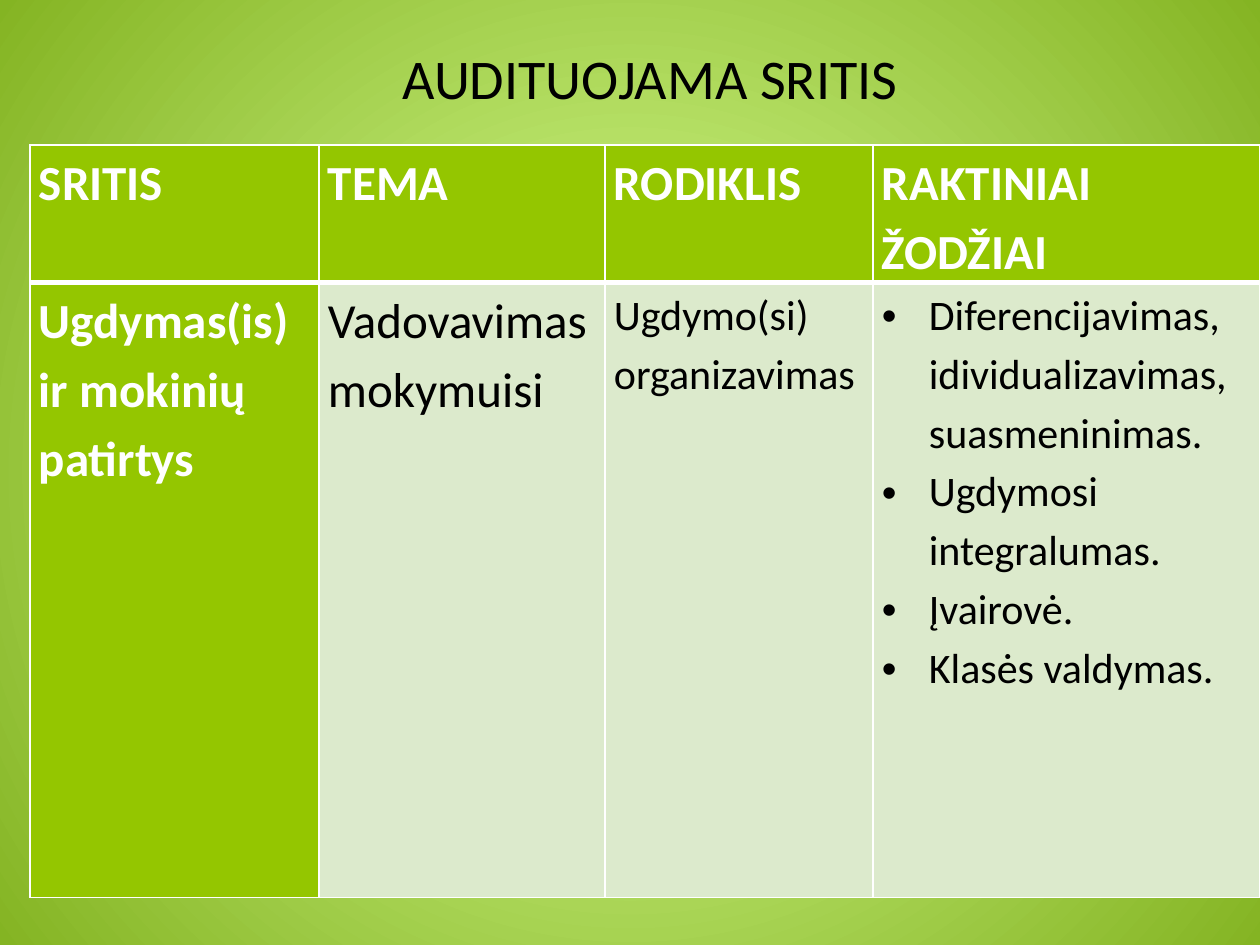
import pptx
import pptx.dml.color
import pptx.enum.text
import pptx.oxml
import pptx.oxml.ns
import pptx.util
from lxml import etree

# Content
TITLE = "AUDITUOJAMA SRITIS"
HEADERS = ["SRITIS", "TEMA", "RODIKLIS", "RAKTINIAI ŽODŽIAI"]
AREA = "Ugdymas(is) ir mokinių patirtys"
TOPIC = "Vadovavimas mokymuisi"
INDICATOR = "Ugdymo(si) organizavimas"
KEYWORDS = [
    "Diferencijavimas, idividualizavimas, suasmeninimas.",
    "Ugdymosi integralumas.",
    "Įvairovė.",
    "Klasės valdymas.",
]

THEME = {
    "font": "Calibri",
    "title_size": 32, "large": 28, "small": 24,
    "dark": "000000", "light": "FFFFFF",
    "strong_fill": "94C600", "pale_fill": "DCEACC",
    "glow": "D9FF95", "edge": "84B423",
    "thin": 1, "thick": 3, "line_spacing": 1.15,
}

# Layout in px
SCALE = 914400 / 126
PAGE_SIZE = (1260, 945)
TITLE_BOX = (115, 37, 1071, 81)
TABLE_AT = (30, 145)
COLUMNS = [289, 286, 268, 387]
ROWS = [137, 615]
CELL_INSET = 9
BULLET_INDENT = 47


def px(length):
    return pptx.util.Emu(round(length * SCALE))


def rgb(name):
    return pptx.dml.color.RGBColor.from_string(THEME[name])


def style_text(para, size, color, bold=False):
    for span in para.runs:
        span.font.name = THEME["font"]
        span.font.size = pptx.util.Pt(THEME[size])
        span.font.bold = bold
        span.font.color.rgb = rgb(color)


def add_bullet(para):
    props = para._p.get_or_add_pPr()
    props.set("marL", str(px(BULLET_INDENT)))
    props.set("indent", str(-px(BULLET_INDENT)))
    for tag, key, value in [("a:buFont", "typeface", "Arial"), ("a:buChar", "char", "•")]:
        etree.SubElement(props, pptx.oxml.ns.qn(tag)).set(key, value)


def set_borders(cell, top, bottom):
    props = cell._tc.get_or_add_tcPr()
    sides = [("L", "thin"), ("R", "thin"), ("T", top), ("B", bottom)]
    for index, (side, weight) in enumerate(sides):
        line = pptx.oxml.parse_xml(
            f'<a:ln{side} {pptx.oxml.ns.nsdecls("a")} w="{pptx.util.Pt(THEME[weight])}">'
            f'<a:solidFill><a:srgbClr val="{THEME["light"]}"/></a:solidFill></a:ln{side}>')
        props.insert(index, line)


def fill_cell(cell, lines, size, strong, bulleted=False):
    cell.margin_left = cell.margin_right = px(CELL_INSET)
    cell.margin_top = cell.margin_bottom = 0
    cell.fill.solid()
    cell.fill.fore_color.rgb = rgb("strong_fill" if strong else "pale_fill")
    cell.text_frame.text = "\n".join(lines)
    for para in cell.text_frame.paragraphs:
        para.line_spacing = THEME["line_spacing"]
        style_text(para, size, "light" if strong else "dark", strong)
        if bulleted:
            add_bullet(para)


def paint_background(page):
    fill = page.background.fill
    fill.gradient()
    for stop, color, position in zip(fill.gradient_stops, ("glow", "edge"), (0, 1)):
        stop.color.rgb = rgb(color)
        stop.position = position
    # Radial gradient from the centre
    linear = page.element.find(".//" + pptx.oxml.ns.qn("a:lin"))
    linear.getparent().replace(linear, pptx.oxml.parse_xml(
        f'<a:path {pptx.oxml.ns.nsdecls("a")} path="circle">'
        '<a:fillToRect l="50000" t="50000" r="50000" b="50000"/></a:path>'))


def add_title(page):
    box = page.shapes.title
    box.left, box.top, box.width, box.height = map(px, TITLE_BOX)
    frame = box.text_frame
    frame.text = TITLE
    frame.word_wrap = True
    frame.vertical_anchor = pptx.enum.text.MSO_ANCHOR.MIDDLE
    frame.paragraphs[0].alignment = pptx.enum.text.PP_ALIGN.CENTER
    style_text(frame.paragraphs[0], "title_size", "dark")


def add_audit_table(page):
    table = page.shapes.add_table(
        len(ROWS), len(COLUMNS), *map(px, TABLE_AT),
        px(sum(COLUMNS)), px(sum(ROWS))).table
    table.horz_banding = False
    for column, width in zip(table.columns, COLUMNS):
        column.width = px(width)
    for row, height in zip(table.rows, ROWS):
        row.height = px(height)

    for index, header in enumerate(HEADERS):
        fill_cell(table.cell(0, index), [header], "large", True)
        set_borders(table.cell(0, index), "thin", "thick")
    body = [
        ([AREA], "large", True),
        ([TOPIC], "large", False),
        ([INDICATOR], "small", False),
        (KEYWORDS, "small", False, True),
    ]
    for index, entry in enumerate(body):
        fill_cell(table.cell(1, index), *entry)
        set_borders(table.cell(1, index), "thick", "thin")


def main():
    deck = pptx.Presentation()
    deck.slide_width, deck.slide_height = map(px, PAGE_SIZE)
    page = deck.slides.add_slide(deck.slide_layouts.get_by_name("Title Only"))
    paint_background(page)
    add_title(page)
    add_audit_table(page)
    deck.save("out.pptx")


if __name__ == "__main__":
    main()
